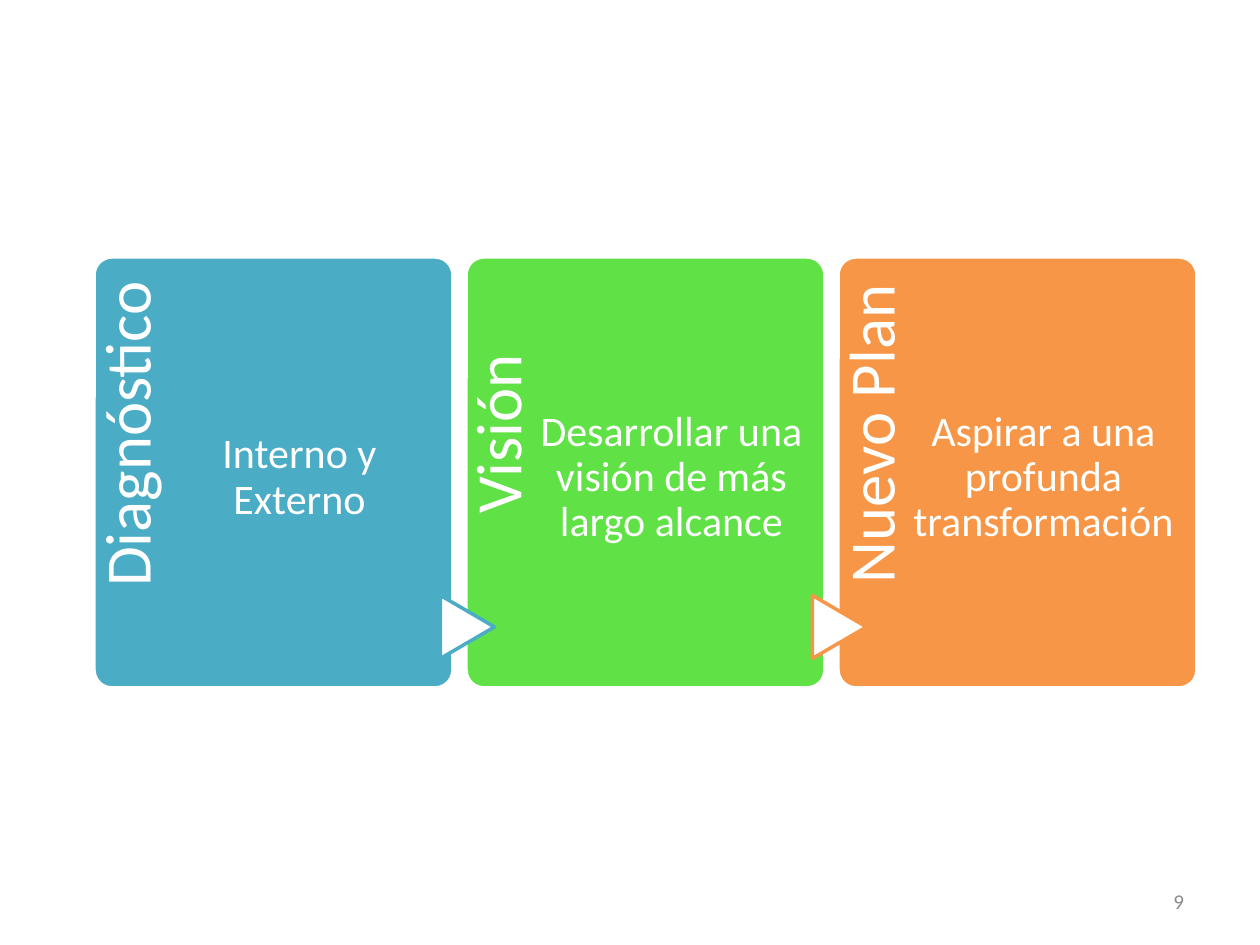
import pptx
import pptx.dml.color
import pptx.enum.shapes
import pptx.enum.text
import pptx.util

PX = 914400 // 126
COLORS = {"white": "FFFFFF", "blue": "4BACC6", "green": "60E146",
          "orange": "F79646", "gray": "8C8C8C"}
SHAPES = pptx.enum.shapes.MSO_SHAPE
ALIGN = pptx.enum.text.PP_ALIGN
ANCHOR = pptx.enum.text.MSO_ANCHOR

PANEL_WIDTH, PANEL_HEIGHT, PANEL_PITCH = 359, 431, 372
FIRST_LEFT, PANEL_TOP = 94, 257
# heading, heading anchor, body, fill color, color of the arrow leading in
PANELS = [
    ("Diagnóstico", ANCHOR.MIDDLE, "Interno y Externo", "blue", None),
    ("Visión", ANCHOR.TOP, "Desarrollar una visión de más largo alcance", "green", "blue"),
    ("Nuevo Plan", ANCHOR.MIDDLE, "Aspirar a una profunda transformación", "orange", "orange"),
]


def rgb(name):
    return pptx.dml.color.RGBColor.from_string(COLORS[name])


def emu(box):
    return [length * PX for length in box]


def set_all(target, values):
    for name, value in values.items():
        setattr(target, name, value)


def add_shape(slide, kind, box, fill, line):
    shape = slide.shapes.add_shape(kind, *emu(box))
    shape.shadow.inherit = False
    shape.fill.solid()
    shape.fill.fore_color.rgb = rgb(fill)
    shape.line.color.rgb = rgb(line)
    shape.line.width = pptx.util.Pt(2)
    return shape


def add_text(slide, box, text, size, color="white", align=ALIGN.CENTER,
             anchor=ANCHOR.MIDDLE, line_spacing=0.9, margins=(0, 0, 0, 0)):
    """Margins are left, top, right and bottom."""
    text_box = slide.shapes.add_textbox(*emu(box))
    frame = text_box.text_frame
    left, top, right, bottom = emu(margins)
    set_all(frame, {"word_wrap": True, "vertical_anchor": anchor,
                    "margin_left": left, "margin_top": top,
                    "margin_right": right, "margin_bottom": bottom})
    paragraph = frame.paragraphs[0]
    set_all(paragraph, {"alignment": align, "line_spacing": line_spacing})
    run = paragraph.add_run()
    run.text = text
    set_all(run.font, {"name": "Calibri", "size": pptx.util.Pt(size)})
    run.font.color.rgb = rgb(color)
    return text_box


def add_panel(slide, box, heading, anchor, body, fill, arrow_color):
    left, top, width, height = box
    card = add_shape(slide, SHAPES.ROUNDED_RECTANGLE, box, fill, "white")
    card.adjustments[0] = 0.05
    label = add_text(slide, (left - 141, top + 141, 353, 72), heading, 37, anchor=anchor)
    label.rotation = 270
    if arrow_color:
        arrow = add_shape(slide, SHAPES.FLOWCHART_EXTRACT,
                          (left - 30, top + 343, 63, 54), "white", arrow_color)
        arrow.rotation = 90
    add_text(slide, (left + 72, top, 267, height), body, 24, margins=(0, 11, 0, 0))


def add_page_number(slide, box, number):
    add_text(slide, box, number, 12, "gray", ALIGN.RIGHT, line_spacing=1.0,
             margins=(13, 6, 13, 6))


def main():
    presentation = pptx.Presentation()
    set_all(presentation, {"slide_width": 1260 * PX, "slide_height": 945 * PX})
    slide = presentation.slides.add_slide(presentation.slide_layouts[6])
    add_page_number(slide, (903, 876, 294, 50), "9")
    for index, panel in enumerate(PANELS):
        left = FIRST_LEFT + index * PANEL_PITCH
        add_panel(slide, (left, PANEL_TOP, PANEL_WIDTH, PANEL_HEIGHT), *panel)
    presentation.save("out.pptx")


if __name__ == "__main__":
    main()
